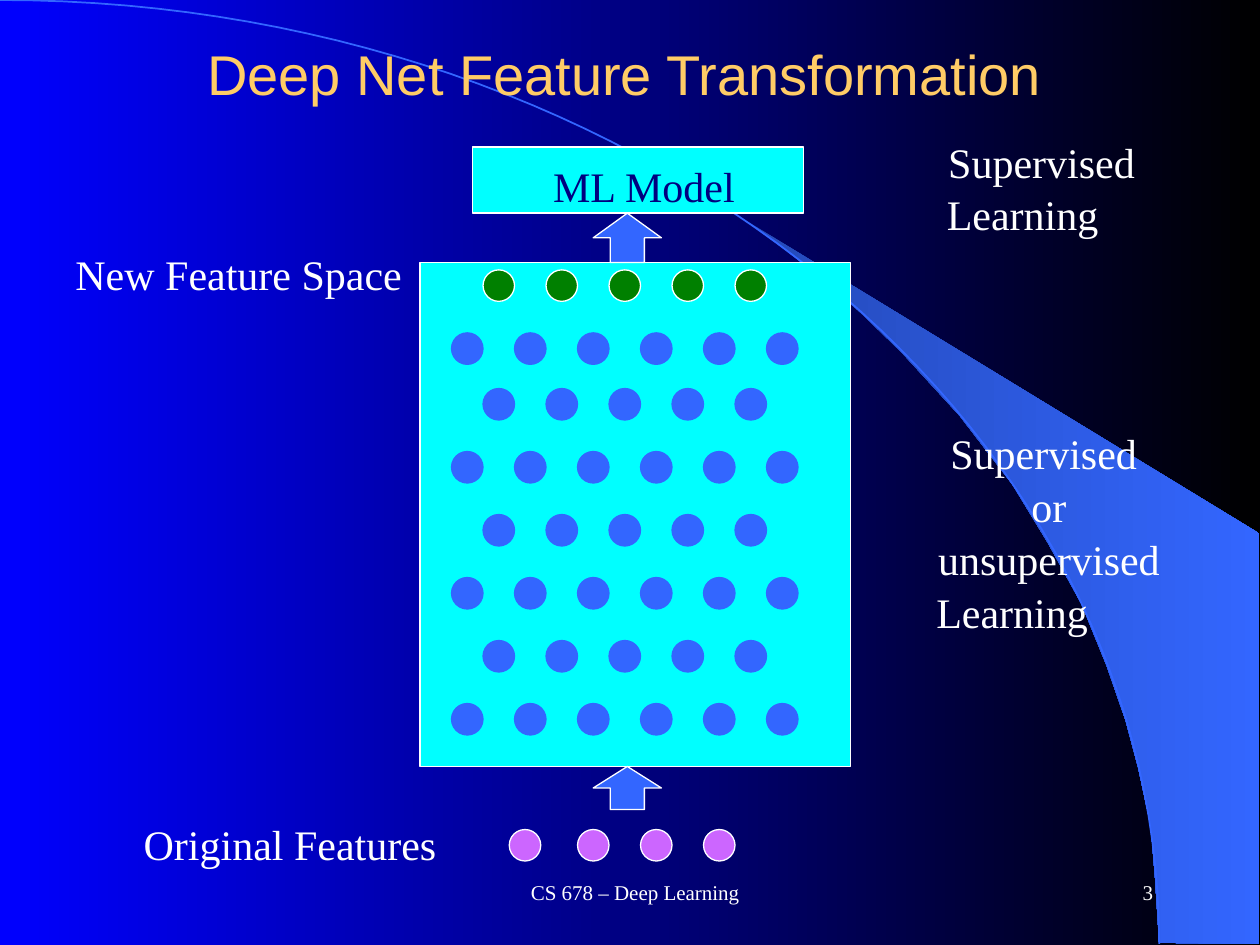
from pptx import Presentation
from pptx.dml.color import RGBColor
from pptx.enum.shapes import MSO_SHAPE
from pptx.enum.text import MSO_ANCHOR, MSO_AUTO_SIZE, PP_ALIGN
from pptx.util import Inches, Pt

RECTANGLE, CIRCLE, UP_ARROW = MSO_SHAPE.RECTANGLE, MSO_SHAPE.OVAL, MSO_SHAPE.UP_ARROW
LEFT, CENTER, RIGHT = PP_ALIGN.LEFT, PP_ALIGN.CENTER, PP_ALIGN.RIGHT
MIDDLE = MSO_ANCHOR.MIDDLE
GROW = MSO_AUTO_SIZE.SHAPE_TO_FIT_TEXT

COLORS = {
    "night": "000000", "deep": "0000FF", "shade": "2449B6", "blue": "3366FF",
    "cyan": "00FFFF", "white": "FFFFFF", "gold": "FFCC66", "navy": "00007F",
    "violet": "CC66FF", "green": "008000",
}
COLUMNS, ROWS = 120, 90
CELL = Inches(10) / COLUMNS
NODE, PITCH = 3, 6
SWOOSH = [
    (110.4, 89.8), (119.9, 89.9), (119.9, 50.8), (70.7, 20.8), (74.9, 23.9),
    (78.4, 26.6), (82.2, 30), (85.9, 33.6), (91.4, 39.6), (96.4, 46.1),
    (99.8, 51.7), (103, 57.5), (105.4, 63.4), (107.2, 68.6), (108.4, 73.1),
    (109.6, 78.7), (110, 83.5),
]
ARC = [(0, 0), (61, 0), (110.4, 40.2), (110.4, 89.9)]
ARC_STEPS = 60


def color(name):
    """Return the palette colour of that name."""
    return RGBColor.from_string(COLORS[name])


def cells(*values):
    """Turn grid cells into slide lengths."""
    return [round(value * CELL) for value in values]


def paint_gradient(fill, first, last):
    """Fill from left to right with two colours."""
    fill.gradient()
    fill.gradient_angle = 0
    for stop, name in zip(fill.gradient_stops, (first, last)):
        stop.color.rgb = color(name)


def add_block(page, kind, box, fill, line="white"):
    """Add a flat preset shape in the given box."""
    block = page.shapes.add_shape(kind, *cells(*box))
    block.shadow.inherit = False
    block.fill.solid()
    block.fill.fore_color.rgb = color(fill)
    block.line.color.rgb = color(line)
    block.line.width = Pt(0.75)


def add_text(page, box, lines, size, ink, font="Times New Roman"):
    """Add a text box of (text, alignment) lines and return its frame."""
    frame = page.shapes.add_textbox(*cells(*box)).text_frame
    frame.text = "\n".join(text for text, _ in lines)
    for index, (para, (_, alignment)) in enumerate(zip(frame.paragraphs, lines)):
        para.alignment = alignment
        if index:
            para.space_before = Pt(1.4)
        for span in para.runs:
            span.font.size = Pt(size)
            span.font.name = font
            span.font.color.rgb = color(ink)
    return frame


def add_label(page, box, lines, ink="white"):
    """Add an unwrapped diagram label."""
    frame = add_text(page, box, lines, 24, ink)
    frame.word_wrap = False
    frame.auto_size = GROW
    frame.margin_top = Inches(0.08)


def add_banner(page, box, text, size, ink, alignment, font="Times New Roman"):
    """Add a wrapped line of text centred vertically in its box."""
    frame = add_text(page, box, [(text, alignment)], size, ink, font)
    frame.word_wrap = True
    frame.vertical_anchor = MIDDLE


def add_outline(page, box, points, closed):
    """Draw a freeform through points counted from the box corner."""
    left, top = box[:2]
    corners = [cells(left + x, top + y) for x, y in points]
    builder = page.shapes.build_freeform(*corners[0], scale=1.0)
    builder.add_line_segments(corners[1:], close=closed)
    outline = builder.convert_to_shape()
    outline.shadow.inherit = False
    return outline


def arc_point(share):
    """Return the point at a share of the cubic arc."""
    rest = 1 - share
    weights = (rest**3, 3 * rest**2 * share, 3 * rest * share**2, share**3)
    return tuple(sum(w * p[axis] for w, p in zip(weights, ARC)) for axis in (0, 1))


def draw_backdrop(page, box):
    """Paint the background, the swoosh and the arc."""
    paint_gradient(page.background.fill, "deep", "night")
    swoosh = add_outline(page, box, SWOOSH, True)
    paint_gradient(swoosh.fill, "shade", "blue")
    swoosh.line.fill.background()
    steps = [arc_point(step / ARC_STEPS) for step in range(ARC_STEPS + 1)]
    arc = add_outline(page, box, steps, False)
    arc.fill.background()
    arc.line.color.rgb = color("blue")
    arc.line.width = Pt(1)


def draw_nodes(page, lefts, top, fill, line="white"):
    """Draw one row of circular nodes."""
    for left in lefts:
        add_block(page, CIRCLE, (left, top, NODE, NODE), fill, line)


def draw_network(page, box):
    """Draw the panel with its alternating layers of nodes."""
    left, top = box[:2]
    add_block(page, RECTANGLE, box, "cyan")
    wide = [left + 3 + PITCH * i for i in range(6)]
    narrow = [left + 6 + PITCH * i for i in range(5)]
    draw_nodes(page, narrow, top + 0.7, "green")
    layer_tops = [6.7] + [12 + PITCH * i for i in range(6)]
    for index, layer_top in enumerate(layer_tops):
        draw_nodes(page, narrow if index % 2 else wide, top + layer_top, "blue", "blue")


def draw_model(page, box):
    """Draw the model box with its name."""
    left, top = box[:2]
    add_block(page, RECTANGLE, box, "cyan")
    add_label(page, (left + 6.5, top + 0.3, 19.9, 6), [("ML Model", LEFT)], "navy")


def draw_inputs(page, box):
    """Draw the label and the nodes of the input features."""
    left, top = box[:2]
    add_label(page, (left, top, 30.6, 6), [("Original Features", LEFT)])
    lefts = [left + 36] + [left + 42.5 + PITCH * i for i in range(3)]
    draw_nodes(page, lefts, top + 2, "violet")


def draw_footer(page, box):
    """Place the course name and the page number."""
    left, top, _, height = box
    add_banner(page, (left, top, 45, height), "CS 678 – Deep Learning", 12, "white", CENTER)
    add_banner(page, (left + 48, top, 25, height), "3", 12, "white", RIGHT)


def main():
    """Build the deck and save it."""
    deck = Presentation()
    deck.slide_width, deck.slide_height = cells(COLUMNS, ROWS)
    page = deck.slides.add_slide(deck.slide_layouts[6])
    draw_backdrop(page, (0, 0, COLUMNS, ROWS))
    add_banner(page, (6, 0, 107, 14), "Deep Net Feature Transformation",
               32, "gold", CENTER, "Arial")
    draw_footer(page, (38, 82, 73, 6))
    draw_network(page, (40, 25, 41, 48))
    for arrow in ((56.5, 20.3, 6.5, 4.7), (56.5, 73, 6.5, 4.1)):
        add_block(page, UP_ARROW, arrow, "blue")
    draw_model(page, (45, 14, 31.5, 6.3))
    draw_inputs(page, (12.5, 77, 57.5, 6))
    add_label(page, (6, 22.7, 34, 6), [("New Feature Space", LEFT)])
    add_label(page, (89, 12, 20.4, 10.9), [("Supervised", CENTER), ("Learning", LEFT)])
    add_label(page, (88, 39.8, 23.8, 20.6), [
        ("Supervised ", CENTER), ("or", CENTER),
        ("unsupervised", CENTER), ("Learning", LEFT)])
    deck.save("out.pptx")


if __name__ == "__main__":
    main()
